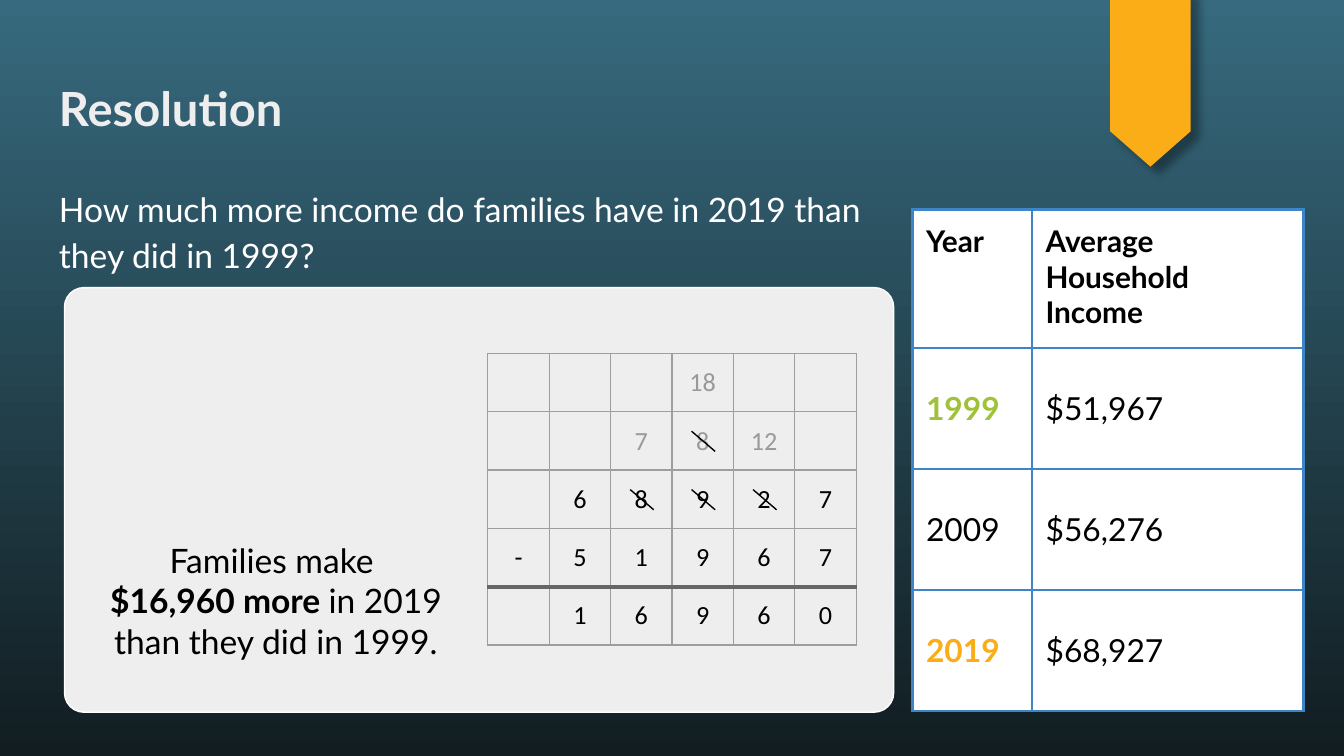
from collections import namedtuple
from lxml import etree
from pptx import Presentation
from pptx.dml.color import RGBColor
from pptx.enum.shapes import MSO_CONNECTOR, MSO_SHAPE
from pptx.enum.text import MSO_ANCHOR, PP_ALIGN
from pptx.oxml.ns import qn
from pptx.util import Inches, Pt

LINE = MSO_CONNECTOR.STRAIGHT
BADGE = MSO_SHAPE.FLOWCHART_OFFPAGE_CONNECTOR
ROUND = MSO_SHAPE.ROUNDED_RECTANGLE
TOP, MID, BOTTOM = MSO_ANCHOR.TOP, MSO_ANCHOR.MIDDLE, MSO_ANCHOR.BOTTOM
LEFT, CENTER = PP_ALIGN.LEFT, PP_ALIGN.CENTER

Theme = namedtuple("Theme", "sky deep gold green pale white black blue gray "
                   "rule faint font sums title body head cell digit")
T = Theme(sky="376A7E", deep="111D21", gold="FBAD17", green="9FC23A",
          pale="EEEEEE", white="FFFFFF", black="000000", blue="3D85C6",
          gray="9E9E9E", rule="666666", faint="999999", font="Lato",
          sums="Calibri", title=25.2, body=18, head=16, cell=17, digit=14)

# The slide is a grid of 100 columns by 56.25 rows of square units
WIDE, HIGH = Inches(10), Inches(5.625)
PAD = 1
SUM_X, SUM_Y, SUM_W, SUM_H = 36.3, 26.3, 4.57, 4.34
SUMS = ["   18  ", "  78|12| ", " 68927", "-51967", " 16960"]
SUMS = [["", "", "", "18", "", ""], ["", "", "7", "8", "12", ""],
        ["", *"68927"], [*"-51967"], ["", *"16960"]]
STRUCK = [(1, 3), (2, 2), (2, 3), (2, 4)]
INCOME = [("1999", "$51,967", T.green), ("2009", "$56,276", T.black),
          ("2019", "$68,927", T.gold)]


def unit(n):
    return round(WIDE * n / 100)


def rgb(code):
    return RGBColor.from_string(code)


def shade(parent):
    """Make an effect list that holds the soft drop shadow."""
    fx = etree.SubElement(parent, qn("a:effectLst"))
    drop = etree.SubElement(fx, qn("a:outerShdw"), blurRad=str(Pt(4.5)),
                            dist=str(Pt(6)), dir=str(43 * 60000))
    tone = etree.SubElement(drop, qn("a:srgbClr"), val=T.black)
    etree.SubElement(tone, qn("a:alpha"), val="35000")
    return fx


def add_run(para, text, size, color, bold=False, font=T.font, glow=False):
    run = para.add_run()
    run.text = text
    run.font.size, run.font.bold = Pt(size), bold
    run.font.color.rgb = rgb(color)
    if glow:
        shade(run.font._element)
    run.font.name = font


def set_frame(frame, anchor, right=PAD, bottom=PAD):
    frame.word_wrap = True
    frame.vertical_anchor = anchor
    frame.margin_left = frame.margin_top = unit(PAD)
    frame.margin_right, frame.margin_bottom = unit(right), unit(bottom)


def add_text(slide, area, text, size, color, bold=False, gap=1.0):
    box = slide.shapes.add_textbox(*map(unit, area))
    set_frame(box.text_frame, TOP)
    para = box.text_frame.paragraphs[0]
    para.line_spacing = gap
    add_run(para, text, size, color, bold, glow=True)


def add_block(slide, kind, area, fill, edge=None):
    shape = slide.shapes.add_shape(kind, *map(unit, area))
    shape.shadow.inherit = False
    shape.fill.solid()
    shape.fill.fore_color.rgb = rgb(fill)
    if edge:
        shape.line.color.rgb, shape.line.width = rgb(edge), Pt(0.75)
    else:
        shape.line.fill.background()
    return shape


def add_grid(slide, x, y, cols, rows):
    frame = slide.shapes.add_table(len(rows), len(cols), unit(x), unit(y),
                                   unit(sum(cols)), unit(sum(rows)))
    table = frame.table
    table.first_row = table.horz_banding = False
    for col, width in zip(table.columns, cols):
        col.width = unit(width)
    for row, height in zip(table.rows, rows):
        row.height = unit(height)
    return table


def set_cell(cell, anchor, align, fill, **edges):
    """Style a cell; edges are L, R, T and B as (colour, points)."""
    cell.vertical_anchor = anchor
    cell.margin_left = cell.margin_right = unit(PAD)
    cell.margin_top = cell.margin_bottom = unit(PAD)
    if fill:
        cell.fill.solid()
        cell.fill.fore_color.rgb = rgb(fill)
    else:
        cell.fill.background()
    props = cell._tc.get_or_add_tcPr()
    for spot, side in enumerate("LRTB"):
        color, width = edges[side]
        line = etree.Element(qn("a:ln" + side), w=str(Pt(width)))
        paint = etree.SubElement(line, qn("a:solidFill"))
        etree.SubElement(paint, qn("a:srgbClr"), val=color)
        props.insert(spot, line)
    para = cell.text_frame.paragraphs[0]
    para.alignment = align
    return para


def add_strike(slide, row, col):
    x, y = SUM_X + col * SUM_W + 1.45, SUM_Y + row * SUM_H + 1.45
    line = slide.shapes.add_connector(
        LINE, *map(unit, (x, y, x + 1.75, y + 1.5)))
    line.line.color.rgb, line.line.width = rgb(T.black), Pt(0.75)
    etree.SubElement(line._element.spPr, qn("a:effectLst"))


def add_income(slide):
    table = add_grid(slide, 67.9, 15.6, [8.9, 20.2], [10.3, 9, 9, 9])
    edges = dict.fromkeys("LRTB", (T.blue, 1.5))
    for col, text in enumerate(["Year", "Average Household Income"]):
        para = set_cell(table.cell(0, col), TOP, LEFT, T.white, **edges)
        add_run(para, text, T.head, T.black, True)
    for row, (year, income, color) in enumerate(INCOME, 1):
        para = set_cell(table.cell(row, 0), MID, LEFT, T.white, **edges)
        add_run(para, year, T.cell, color, color != T.black)
        para = set_cell(table.cell(row, 1), MID, LEFT, T.white, **edges)
        add_run(para, income, T.cell, T.black)


def add_answer(slide):
    panel = add_block(slide, ROUND, (4.8, 21.4, 61.7, 31.6), T.pale, T.white)
    panel.adjustments[0] = 0.046
    set_frame(panel.text_frame, BOTTOM, right=31.2, bottom=3.4)
    para = panel.text_frame.paragraphs[0]
    para.alignment = CENTER
    add_run(para, "Families make ", T.body, T.black)
    para.add_line_break()
    add_run(para, "$16,960 more ", T.body, T.black, True)
    add_run(para, "in 2019 than they did in 1999.", T.body, T.black)


def add_sums(slide):
    table = add_grid(slide, SUM_X, SUM_Y, [SUM_W] * 6, [SUM_H] * len(SUMS))
    thin, thick = (T.gray, 0.75), (T.rule, 2.25)
    last = len(SUMS) - 1
    for row, digits in enumerate(SUMS):
        top = thick if row == last else thin
        base = thick if row == last - 1 else thin
        for col, digit in enumerate(digits):
            para = set_cell(table.cell(row, col), MID, CENTER, None,
                            L=thin, R=thin, T=top, B=base)
            if digit:
                add_run(para, digit, T.digit, T.faint if row < 2 else T.black,
                        font=T.sums)
            else:
                para.font.size = Pt(T.digit)
    for row, col in STRUCK:
        add_strike(slide, row, col)


def add_back(slide):
    fill = slide.background.fill
    fill.gradient()
    fill.gradient_angle = 270
    for stop, color, spot in zip(fill.gradient_stops, (T.sky, T.deep), (0, 1)):
        stop.color.rgb, stop.position = rgb(color), spot


def main():
    deck = Presentation()
    deck.slide_width, deck.slide_height = WIDE, HIGH
    slide = deck.slides.add_slide(deck.slide_layouts[6])

    # Backdrop and ribbon
    add_back(slide)
    ribbon = add_block(slide, BADGE, (82.6, -0.8, 6, 13.2), T.gold)
    props = ribbon._element.spPr
    props.remove(props.find(qn("a:effectLst")))
    shade(props)

    # Heading and question
    add_text(slide, (3.4, 4.9, 93.2, 6.3), "Resolution", T.title, T.pale, True)
    add_text(slide, (3.4, 12.6, 63.1, 37.4), "How much more income do families "
             "have in 2019 than they did in 1999?", T.body, T.white, gap=1.15)

    # Data, answer and working
    add_income(slide)
    add_answer(slide)
    add_sums(slide)
    deck.save("out.pptx")


if __name__ == "__main__":
    main()
